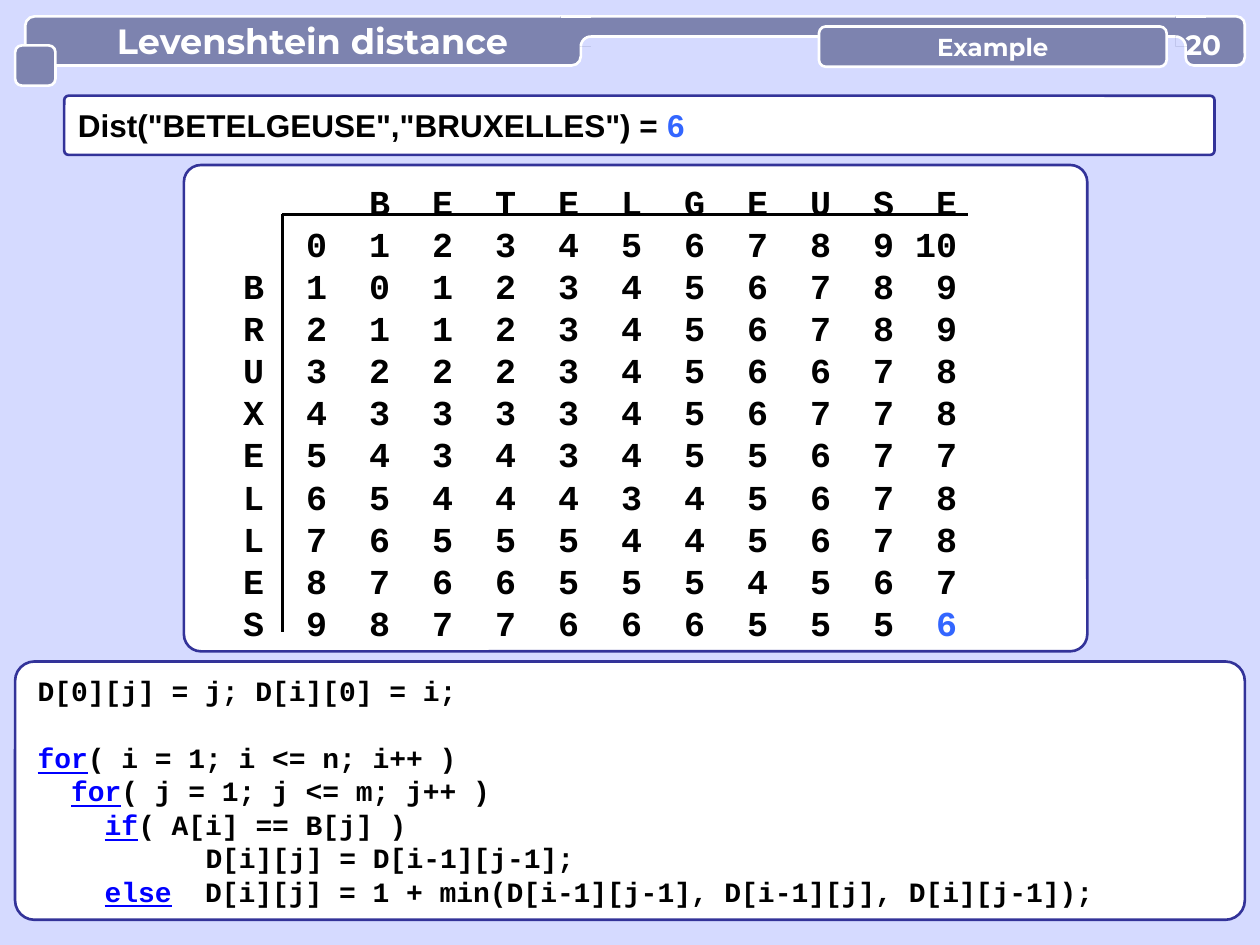
from dataclasses import dataclass
from math import cos, pi, sin

from lxml import etree
from pptx import Presentation
from pptx import util as u
from pptx.dml.color import RGBColor
from pptx.enum import shapes, text
from pptx.oxml import ns

Inches, Pt = u.Inches, u.Pt


@dataclass(frozen=True)
class Theme:
    page: str = "D5DAFF"
    banner: str = "7D83AF"
    white: str = "FFFFFF"
    border: str = "333399"
    ink: str = "000000"
    result: str = "3366FF"
    keyword: str = "0000FF"
    sans: str = "Arial"
    mono: str = "Courier New"
    head: str = "Montserrat"
    title: int = 20
    subtitle: int = 14
    number: int = 16
    formula: int = 18
    matrix: int = 20
    code: int = 16
    stroke: float = 1.5


theme = Theme()
color = RGBColor.from_string


def paint(shape, fill, line):
    """Set fill and line of a shape or connector; None leaves that part out."""
    if hasattr(shape, "fill"):
        shape.shadow.inherit = False
        if fill:
            shape.fill.solid()
            shape.fill.fore_color.rgb = color(fill)
        else:
            shape.fill.background()
    else:
        etree.SubElement(shape._element.spPr, ns.qn("a:effectLst"))
    if line:
        shape.line.color.rgb = color(line)
        shape.line.width = Pt(theme.stroke)
    else:
        shape.line.fill.background()
    return shape


def write(paragraph, runs, font, size, align=text.PP_ALIGN.LEFT):
    """Fill a paragraph with (words, colour) runs in one bold font."""
    paragraph.alignment = align
    paragraph.font.name, paragraph.font.size, paragraph.font.bold = font, Pt(size), True
    for words, ink in runs:
        run = paragraph.add_run()
        run.text = words
        run.font.color.rgb = color(ink)
        if ink == theme.keyword:
            run.font.underline = True


prs = Presentation()
prs.slide_width, prs.slide_height = Inches(10), Inches(7.5)
slide = prs.slides.add_slide(prs.slide_layouts[6])
slide.background.fill.solid()
slide.background.fill.fore_color.rgb = color(theme.page)
canvas = slide.shapes

# Rounded panels: left, top, width, height, corner, fill, line
panels = {
    "formula": (0.51, 0.76, 9.13, 0.47, 0.075, theme.white, theme.border),
    "matrix": (1.46, 1.31, 7.17, 3.86, 0.035, theme.white, theme.border),
    "code": (0.12, 5.25, 9.76, 2.05, 0.075, theme.white, theme.border),
    "title": (0.2, 0.13, 4.41, 0.39, 0.19, theme.banner, theme.white),
    "bar": (4.61, 0.13, 4.88, 0.16, 0.5, theme.banner, theme.white),
    "knob": (0.12, 0.36, 0.32, 0.32, 0.17, theme.banner, theme.white),
    "page": (9.41, 0.13, 0.47, 0.39, 0.17, theme.banner, theme.white),
    "example": (6.5, 0.21, 2.76, 0.32, 0.17, theme.banner, theme.white),
}
frames = {}
for name, (left, top, width, height, corner, fill, line) in panels.items():
    panel = canvas.add_shape(shapes.MSO_SHAPE.ROUNDED_RECTANGLE,
                             Inches(left), Inches(top), Inches(width), Inches(height))
    panel.adjustments[0] = corner
    paint(panel, fill, line)
    frames[name] = panel.text_frame
    frames[name].word_wrap = True
    frames[name].vertical_anchor = text.MSO_ANCHOR.MIDDLE

# Joints that blend the bar into the title and the page tab
joint, radius, joint_top = 0.24, 0.08, 0.13
for outer, side in ((4.45, 1), (9.57, -1)):
    inner = outer + side * joint
    block = canvas.add_shape(shapes.MSO_SHAPE.RECTANGLE, Inches(min(outer, inner)),
                             Inches(joint_top), Inches(joint), Inches(joint))
    paint(block, theme.banner, None)
    edge = canvas.add_connector(shapes.MSO_CONNECTOR.STRAIGHT, Inches(outer),
                                Inches(joint_top), Inches(inner), Inches(joint_top))
    paint(edge, None, theme.white)
    center_y = joint_top + joint
    arc = [(Inches(inner - side * radius * sin(k * pi / 16)),
            Inches(center_y - radius * cos(k * pi / 16))) for k in range(9)]
    for points, closed, fill, line in (
            (arc + [(Inches(inner), Inches(center_y))], True, theme.page, None),
            (arc, False, None, theme.white)):
        outline = canvas.build_freeform(*points[0])
        outline.add_line_segments(points[1:], close=closed)
        paint(outline.convert_to_shape(), fill, line)

# Heading texts
centered = text.PP_ALIGN.CENTER
frames["title"].margin_left = Inches(0.25)
write(frames["title"].paragraphs[0], [("Levenshtein distance", theme.white)],
      theme.head, theme.title, centered)
write(frames["example"].paragraphs[0], [("Example", theme.white)],
      theme.head, theme.subtitle, centered)
page_number = canvas.add_textbox(Inches(9.41), Inches(0.22), Inches(0.4), Inches(0.27)).text_frame
page_number.margin_left = page_number.margin_right = 0
page_number.margin_top = page_number.margin_bottom = 0
page_number.word_wrap = True
page_number.vertical_anchor = text.MSO_ANCHOR.MIDDLE
write(page_number.paragraphs[0], [("20", theme.white)], theme.head, theme.number)

# Distance matrix, computed by the algorithm on the slide
across, down = "BETELGEUSE", "BRUXELLES"
distance = [list(range(len(across) + 1))]
for i, letter in enumerate(down, 1):
    row = [i]
    for j, other in enumerate(across, 1):
        above = distance[i - 1]
        row.append(above[j - 1] if letter == other
                   else 1 + min(above[j - 1], above[j], row[j - 1]))
    distance.append(row)
result = str(distance[-1][-1])

write(frames["formula"].paragraphs[0],
      [(f'Dist("{across}","{down}") = ', theme.ink), (result, theme.result)],
      theme.sans, theme.formula)

# Matrix rows on right-aligned tab stops
rows = [["", "", *across]]
rows += [[label, *map(str, values)] for label, values in zip(" " + down, distance)]
rows[1][0] = ""
frames["matrix"].margin_top = Inches(0.11)
for index, cells in enumerate(rows):
    paragraph = frames["matrix"].paragraphs[0] if index == 0 else frames["matrix"].add_paragraph()
    line = "".join("\t" + cell for cell in cells)
    runs = [(line, theme.ink)]
    if index == len(rows) - 1:
        runs = [(line[:-len(result)], theme.ink), (result, theme.result)]
    write(paragraph, runs, theme.mono, theme.matrix)
    paragraph.line_spacing = Pt(24)
    stops = etree.Element(ns.qn("a:tabLst"))
    for column in range(len(cells)):
        etree.SubElement(stops, ns.qn("a:tab"), pos=str(Inches(0.5 * (column + 1))), algn="r")
    paragraph._p.get_or_add_pPr().find(ns.qn("a:defRPr")).addprevious(stops)

# Matrix axes
for end_x, end_y in ((7.68, 1.7), (2.24, 5.02)):
    axis = canvas.add_connector(shapes.MSO_CONNECTOR.STRAIGHT, Inches(2.24), Inches(1.7),
                                Inches(end_x), Inches(end_y))
    paint(axis, None, theme.ink)

# Algorithm: indent in characters, keyword, rest of the line
algorithm = [
    (1, "", "D[0][j] = j; D[i][0] = i;"),
    (1, "for", "( i = 1; i <= n; i++ )"),
    (3, "for", "( j = 1; j <= m; j++ )"),
    (5, "if", "( A[i] == B[j] )"),
    (11, "", "D[i][j] = D[i-1][j-1];"),
    (5, "else", "  D[i][j] = 1 + min(D[i-1][j-1], D[i-1][j], D[i][j-1]);"),
]
code = frames["code"]
code.margin_left = code.margin_right = code.margin_top = code.margin_bottom = 0
for index, (indent, keyword, rest) in enumerate(algorithm):
    paragraph = code.paragraphs[0] if index == 0 else code.add_paragraph()
    runs = [(keyword, theme.keyword)] if keyword else []
    write(paragraph, runs + [(rest, theme.ink)], theme.mono, theme.code)
    paragraph.line_spacing = Pt(19.1)
    paragraph._p.get_or_add_pPr().set("marL", str(Inches(indent * 0.6 * theme.code / 72)))
code.paragraphs[0].space_after = Pt(19.1)

prs.save("out.pptx")
